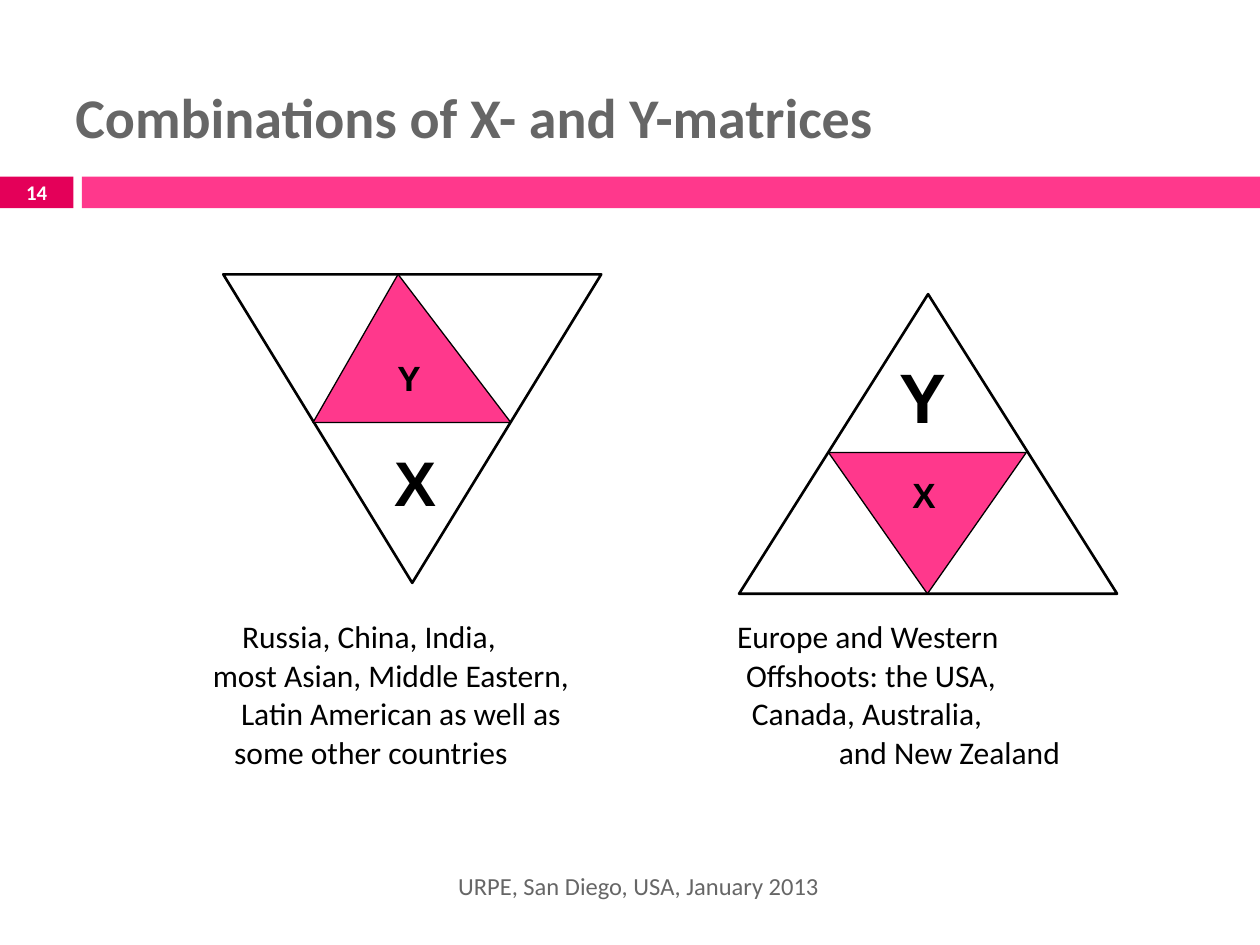
from dataclasses import dataclass

from pptx import Presentation
from pptx.dml.color import RGBColor
from pptx.enum.shapes import MSO_SHAPE as Shape
from pptx.enum.text import MSO_ANCHOR as Anchor, PP_ALIGN as Align
from pptx.util import Cm, Pt


@dataclass(frozen=True)
class Theme:
    pink: str = "FF388C"
    crimson: str = "E40059"
    grey: str = "666666"
    black: str = "000000"
    white: str = "FFFFFF"
    body_font: str = "Calibri"
    letter_font: str = "Arial"
    title_size: float = 32
    body_size: float = 18
    footer_size: float = 14
    number_size: float = 11.9
    outer_line: float = 1.5
    inner_line: float = 0.75


def set_all(target, values):
    for name, value in values.items():
        setattr(target, name, value)


class SlideBuilder:
    def __init__(self, page, theme):
        self.page = page
        self.theme = theme

    def shape(self, kind, area, fill):
        item = self.page.shapes.add_shape(kind, *map(Cm, area))
        item.shadow.inherit = False
        item.fill.solid()
        item.fill.fore_color.rgb = RGBColor.from_string(fill)
        item.line.fill.background()
        return item

    def bar(self, area, fill):
        return self.shape(Shape.RECTANGLE, area, fill)

    def triangle(self, area, fill, line, apex=0.5, rotation=0):
        item = self.shape(Shape.ISOSCELES_TRIANGLE, area, fill)
        item.adjustments[0] = apex
        item.rotation = rotation
        item.line.color.rgb = RGBColor.from_string(self.theme.black)
        item.line.width = Pt(line)

    def text(self, area, lines, size, color, font=None, bold=False,
             align=Align.LEFT, anchor=Anchor.MIDDLE, margin=0.25):
        box = self.page.shapes.add_textbox(*map(Cm, area))
        frame = box.text_frame
        set_all(frame, {
            "word_wrap": True, "vertical_anchor": anchor,
            "margin_left": Cm(margin), "margin_right": Cm(margin),
        })
        for index, line in enumerate(lines):
            para = frame.add_paragraph() if index else frame.paragraphs[0]
            para.alignment = align
            span = para.add_run()
            span.text = line
            set_all(span.font, {
                "name": font or self.theme.body_font,
                "size": Pt(size), "bold": bold,
            })
            span.font.color.rgb = RGBColor.from_string(color)
        return frame

    def letter(self, text, center, size):
        """Place one bold letter centred on a point."""
        side = 2
        x, y = center
        self.text((x - side / 2, y - side / 2, side, side), [text], size,
                  self.theme.black, font=self.theme.letter_font, bold=True,
                  align=Align.CENTER, margin=0)

    def caption(self, left, rows):
        """Write lines of countries, each with its own left indent in cm."""
        frame = self.text((left, 12.52, 8.5, 3.6), [line for _, line in rows],
                          self.theme.body_size, self.theme.black,
                          anchor=Anchor.TOP, margin=0)
        for para, (indent, _) in zip(frame.paragraphs, rows):
            set_all(para, {"line_spacing": 0.7, "space_before": Pt(7)})
            para._p.get_or_add_pPr().set("marL", str(Cm(indent)))


def main():
    theme = Theme()
    deck = Presentation()
    set_all(deck, {"slide_width": Cm(25.4), "slide_height": Cm(19.05)})
    slide = SlideBuilder(deck.slides.add_slide(deck.slide_layouts[6]), theme)

    slide.bar((0, 3.56, 1.48, 0.64), theme.crimson)
    slide.bar((1.65, 3.56, 23.75, 0.64), theme.pink)
    slide.text((1.27, 0.76, 22.86, 3.18), ["Combinations of X- and Y-matrices"],
               theme.title_size, theme.grey, bold=True)
    slide.text((0, 3.53, 1.48, 0.69), ["14"], theme.number_size, theme.white,
               bold=True, align=Align.CENTER, margin=0)
    slide.text((1.7, 17.35, 15.06, 1.02), ["URPE, San Diego, USA, January 2013"],
               theme.footer_size, theme.grey, align=Align.RIGHT)

    # X-matrix dominates on the left, Y-matrix on the right
    slide.triangle((4.5, 5.53, 7.62, 6.22), theme.white, theme.outer_line,
                   rotation=180)
    slide.triangle((14.9, 5.93, 7.62, 6.04), theme.white, theme.outer_line)
    slide.triangle((6.31, 5.53, 3.99, 2.99), theme.pink, theme.inner_line,
                   apex=0.43)
    slide.triangle((16.7, 9.12, 3.99, 2.85), theme.pink, theme.inner_line,
                   rotation=180)
    for text, center, size in (
        ("Y", (8.25, 7.62), 20),
        ("X", (8.37, 9.7), 36),
        ("Y", (18.61, 7.98), 40),
        ("X", (18.63, 9.97), 20),
    ):
        slide.letter(text, center, size)

    slide.caption(4.29, [
        (0.59, "Russia, China, India,"),
        (0, "most Asian, Middle Eastern,"),
        (0.57, "Latin American as well as"),
        (0.43, "some other countries"),
    ])
    slide.caption(14.86, [
        (0, "Europe and Western"),
        (0.18, "Offshoots: the USA,"),
        (0.3, "Canada, Australia,"),
        (2.05, "and New Zealand"),
    ])

    deck.save("out.pptx")


if __name__ == "__main__":
    main()
